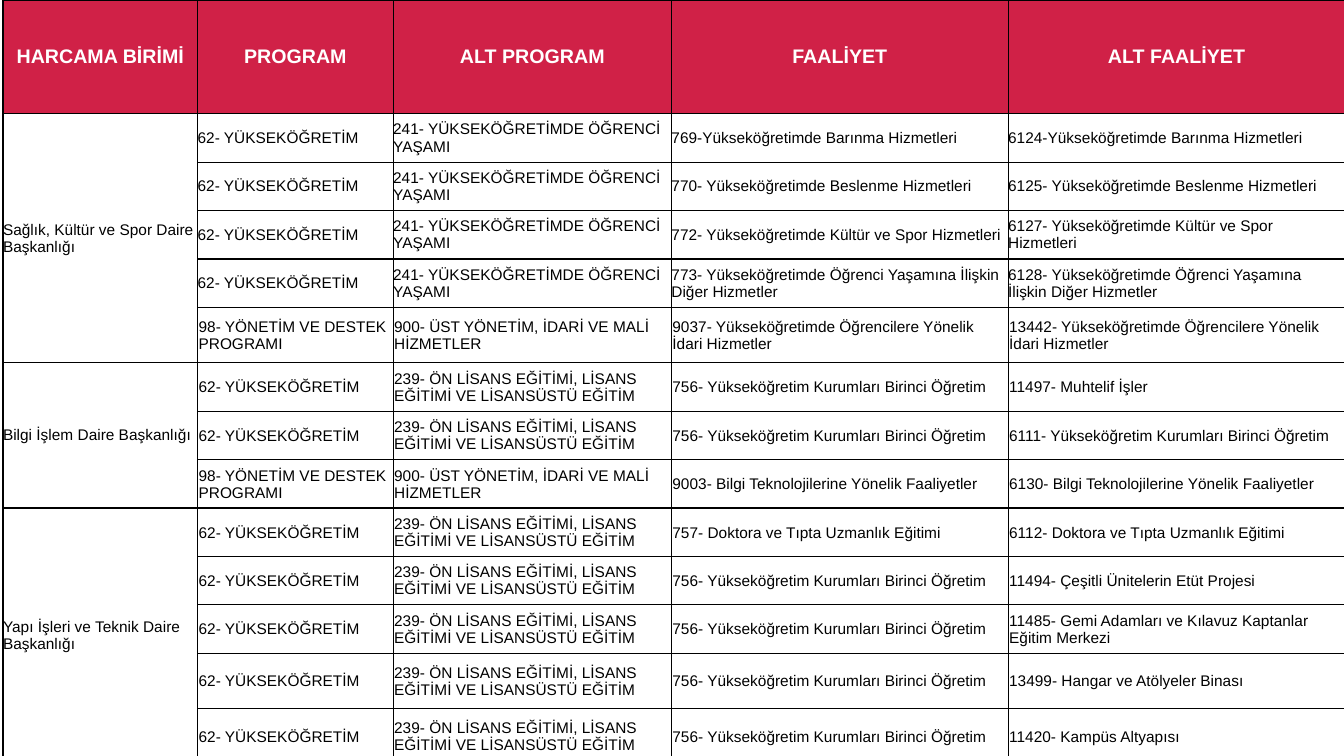
from lxml import etree
from pptx import Presentation
from pptx import util as u
from pptx.dml.color import RGBColor
from pptx.enum import text
from pptx.oxml import ns

COLORS = {"header": "D02147", "title": "FFFFFF", "body": "000000", "border": "000000"}
COLUMN_WIDTHS = [1.93, 1.94, 2.76, 3.34, 3.34]
HEADER_HEIGHT, ROW_HEIGHT, TALL_HEIGHT = 1.13, 0.48, 0.55
TALL_ROWS = {5, 12, 13}
FIRST_PADDED_ROW = 5
HEADINGS = ["HARCAMA BİRİMİ", "PROGRAM", "ALT PROGRAM", "FAALİYET", "ALT FAALİYET"]

HIGHER_EDUCATION = "62- YÜKSEKÖĞRETİM"
SUPPORT = "98- YÖNETİM VE DESTEK PROGRAMI"
PROGRAMS = {
    "student": [HIGHER_EDUCATION, "241- YÜKSEKÖĞRETİMDE ÖĞRENCİ YAŞAMI"],
    "degree": [HIGHER_EDUCATION, "239- ÖN LİSANS EĞİTİMİ, LİSANS EĞİTİMİ VE LİSANSÜSTÜ EĞİTİM"],
    "support": [SUPPORT, "900- ÜST YÖNETİM, İDARİ VE MALİ HİZMETLER"],
}
FIRST_CYCLE = "756- Yükseköğretim Kurumları Birinci Öğretim"
UNITS = {
    "Sağlık, Kültür ve Spor Daire Başkanlığı": [
        ("student", "769-Yükseköğretimde Barınma Hizmetleri", "6124-Yükseköğretimde Barınma Hizmetleri"),
        ("student", "770- Yükseköğretimde Beslenme Hizmetleri", "6125- Yükseköğretimde Beslenme Hizmetleri"),
        ("student", "772- Yükseköğretimde Kültür ve Spor Hizmetleri",
         "6127- Yükseköğretimde Kültür ve Spor Hizmetleri"),
        ("student", "773- Yükseköğretimde Öğrenci Yaşamına İlişkin Diğer Hizmetler",
         "6128- Yükseköğretimde Öğrenci Yaşamına İlişkin Diğer Hizmetler"),
        ("support", "9037- Yükseköğretimde Öğrencilere Yönelik İdari Hizmetler",
         "13442- Yükseköğretimde Öğrencilere Yönelik İdari Hizmetler"),
    ],
    "Bilgi İşlem Daire Başkanlığı": [
        ("degree", FIRST_CYCLE, "11497- Muhtelif İşler"),
        ("degree", FIRST_CYCLE, "6111- Yükseköğretim Kurumları Birinci Öğretim"),
        ("support", "9003- Bilgi Teknolojilerine Yönelik Faaliyetler",
         "6130- Bilgi Teknolojilerine Yönelik Faaliyetler"),
    ],
    "Yapı İşleri ve Teknik Daire Başkanlığı": [
        ("degree", "757- Doktora ve Tıpta Uzmanlık Eğitimi", "6112- Doktora ve Tıpta Uzmanlık Eğitimi"),
        ("degree", FIRST_CYCLE, "11494- Çeşitli Ünitelerin Etüt Projesi"),
        ("degree", FIRST_CYCLE, "11485- Gemi Adamları ve Kılavuz Kaptanlar Eğitim Merkezi"),
        ("degree", FIRST_CYCLE, "13499- Hangar ve Atölyeler Binası"),
        ("degree", FIRST_CYCLE, "11420- Kampüs Altyapısı"),
    ],
}
HEADER_FONT = {"name": "Arial", "size": u.Pt(14), "bold": True}
BODY_FONT = {"name": "Arial", "size": u.Pt(11), "bold": False}


def add_borders(cell):
    properties = cell._tc.get_or_add_tcPr()
    for side in ("lnL", "lnR", "lnT", "lnB"):
        line = etree.SubElement(properties, ns.qn(f"a:{side}"), w=str(u.Pt(1)))
        fill = etree.SubElement(line, ns.qn("a:solidFill"))
        etree.SubElement(fill, ns.qn("a:srgbClr"), val=COLORS["border"])


rows = [HEADINGS]
unit_spans = []
for unit, activities in UNITS.items():
    unit_spans.append((len(rows), len(rows) + len(activities) - 1))
    for index, (program, activity, sub_activity) in enumerate(activities):
        rows.append(["" if index else unit, *PROGRAMS[program], activity, sub_activity])

heights = [HEADER_HEIGHT] + [
    TALL_HEIGHT if row in TALL_ROWS else ROW_HEIGHT for row in range(1, len(rows))
]

deck = Presentation()
deck.slide_width, deck.slide_height = u.Inches(13.33), u.Inches(7.5)
page = deck.slides.add_slide(deck.slide_layouts[6])
table = page.shapes.add_table(
    len(rows), len(COLUMN_WIDTHS), u.Inches(0.03), 0,
    u.Inches(sum(COLUMN_WIDTHS)), u.Inches(sum(heights)),
).table
for column, width in zip(table.columns, COLUMN_WIDTHS):
    column.width = u.Inches(width)
for row, height in zip(table.rows, heights):
    row.height = u.Inches(height)

for row, values in enumerate(rows):
    is_header = row == 0
    for column, value in enumerate(values):
        cell = table.cell(row, column)
        padding = u.Inches(0.01 if row >= FIRST_PADDED_ROW and column else 0)
        layout = {
            "margin_left": padding, "margin_top": padding, "margin_right": padding,
            "margin_bottom": 0, "vertical_anchor": text.MSO_ANCHOR.MIDDLE,
        }
        for name, setting in layout.items():
            setattr(cell, name, setting)
        add_borders(cell)
        if is_header:
            cell.fill.solid()
            cell.fill.fore_color.rgb = RGBColor.from_string(COLORS["header"])
        else:
            cell.fill.background()
        if not value:
            continue
        para = cell.text_frame.paragraphs[0]
        para.alignment = text.PP_ALIGN.CENTER if is_header else text.PP_ALIGN.LEFT
        span = para.add_run()
        span.text = value
        for name, setting in (HEADER_FONT if is_header else BODY_FONT).items():
            setattr(span.font, name, setting)
        span.font.color.rgb = RGBColor.from_string(COLORS["title" if is_header else "body"])

for first, last in unit_spans:
    table.cell(first, 0).merge(table.cell(last, 0))

deck.save("out.pptx")
